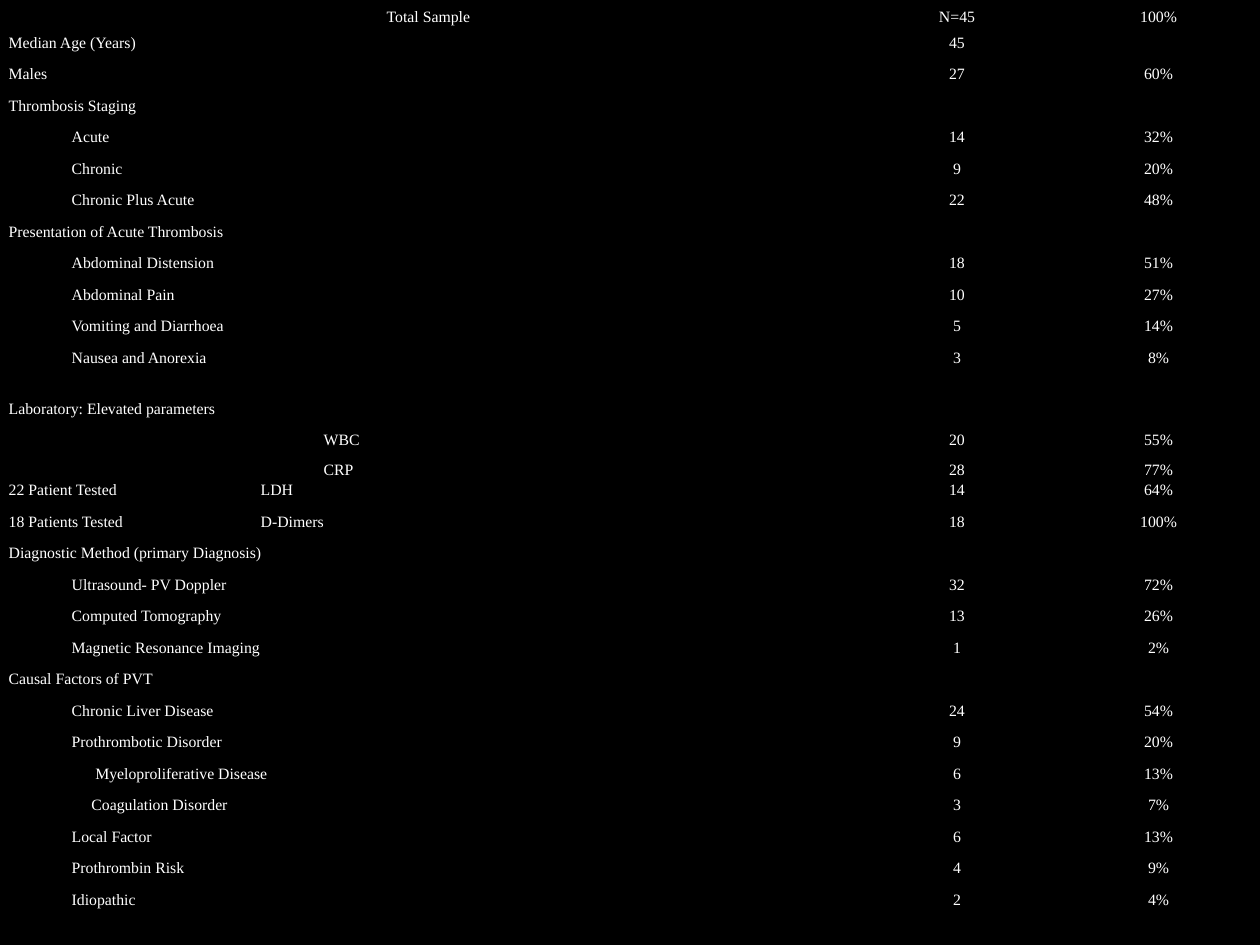
"""Build a one-table slide of patient data on a black ground."""
from typing import NamedTuple

from lxml import etree
from pptx import Presentation
from pptx import util as u
from pptx.dml.color import RGBColor
from pptx.enum import text
from pptx.oxml import ns

FONT, SIZE = "Times New Roman", 9
INK, GROUND = "FFFFFF", "000000"
WIDTHS = (489.6, 114.5, 115.9)
STEP, SUB, DEEP, TAB = 18, 36, 180, 144
ALIGN = text.PP_ALIGN
ANCHOR = text.MSO_ANCHOR


class Line(NamedTuple):
    label: str
    count: str = ""
    share: str = ""
    indent: float = 0


class Row(NamedTuple):
    lines: tuple[Line, ...]
    height: float = STEP


def one(label: str, count: str = "", share: str = "", indent: float = 0,
        height: float = STEP) -> Row:
    return Row((Line(label, count, share, indent),), height)


ROWS = (
    one("Total Sample", "N=45", "100%"),
    one("Median Age (Years)", "45"),
    one("Males", "27", "60%"),
    one("Thrombosis Staging"),
    one("Acute", "14", "32%", SUB),
    one("Chronic", "9", "20%", SUB),
    one("Chronic Plus Acute", "22", "48%", SUB),
    one("Presentation of Acute Thrombosis"),
    one("Abdominal Distension", "18", "51%", SUB),
    one("Abdominal Pain", "10", "27%", SUB),
    one("Vomiting and Diarrhoea", "5", "14%", SUB),
    one("Nausea and Anorexia", "3", "8%", SUB, 29.5),
    Row((Line("Laboratory: Elevated parameters"),
         Line("WBC", "20", "55%", DEEP),
         Line("CRP", "28", "77%", DEEP)), 36),
    one("22 Patient Tested\tLDH", "14", "64%"),
    one("18 Patients Tested\tD-Dimers", "18", "100%"),
    one("Diagnostic Method (primary Diagnosis)"),
    one("Ultrasound- PV Doppler", "32", "72%", SUB),
    one("Computed Tomography", "13", "26%", SUB),
    one("Magnetic Resonance Imaging", "1", "2%", SUB),
    one("Causal Factors of PVT"),
    one("Chronic Liver Disease", "24", "54%", SUB),
    one("Prothrombotic Disorder", "9", "20%", SUB),
    one("Myeloproliferative Disease", "6", "13%", SUB + 13.5),
    one("Coagulation Disorder", "3", "7%", SUB + 11.25),
    one("Local Factor", "6", "13%", SUB),
    one("Prothrombin Risk", "4", "9%", SUB),
    one("Idiopathic", "2", "4%", SUB),
)


def paint(fill, color: str) -> None:
    fill.solid()
    fill.fore_color.rgb = RGBColor.from_string(color)


def add(parent, tag: str, **attrs):
    return etree.SubElement(parent, ns.qn(tag), {k: str(v) for k, v in attrs.items()})


def frame(cell) -> None:
    props = cell._tc.get_or_add_tcPr()
    for side in "LRTB":
        edge = add(props, f"a:ln{side}", w=u.Pt(1))
        add(add(edge, "a:solidFill"), "a:srgbClr", val=GROUND)
    cell.fill.background()
    cell.margin_left = cell.margin_right = u.Pt(5)
    cell.margin_top = cell.margin_bottom = 0


def style(para, align, indent: float) -> None:
    para.alignment = align
    para.line_spacing = 1.15
    para.space_before = u.Pt(6)
    props = para._p.get_or_add_pPr()
    if indent:
        props.set("marL", str(u.Pt(indent)))
    if "\t" in para.text:
        add(add(props, "a:tabLst"), "a:tab", pos=u.Pt(TAB), algn="l")
    for run in para.runs:
        run.font.name, run.font.size = FONT, u.Pt(SIZE)
        paint(run.font.fill, INK)
    if not para.runs:
        add(para._p, "a:endParaRPr", sz=SIZE * 100)


def write(cell, words: list[str], align, indents: list[float], anchor) -> None:
    frame(cell)
    cell.vertical_anchor = anchor
    cell.text_frame.text = "\n".join(words)
    for para, indent in zip(cell.text_frame.paragraphs, indents):
        style(para, align, indent)


def draw(table, num: int, row: Row) -> None:
    table.rows[num].height = u.Pt(row.height)
    head = num == 0
    anchor = ANCHOR.MIDDLE if head else ANCHOR.TOP
    write(table.cell(num, 0), [line.label for line in row.lines],
          ALIGN.CENTER if head else ALIGN.JUSTIFY,
          [line.indent for line in row.lines], anchor)
    if len(row.lines) > 1:
        anchor = ANCHOR.BOTTOM
    for col, key in enumerate(("count", "share"), 1):
        words = [getattr(line, key) for line in row.lines if getattr(line, key)]
        write(table.cell(num, col), words, ALIGN.CENTER, [0] * max(1, len(words)), anchor)


def main() -> None:
    deck = Presentation()
    deck.slide_width, deck.slide_height = u.Pt(720), u.Pt(540)
    slide = deck.slides.add_slide(deck.slide_layouts[6])
    paint(slide.background.fill, GROUND)
    high = sum(row.height for row in ROWS)
    table = slide.shapes.add_table(len(ROWS), len(WIDTHS), 0, 0, u.Pt(720), u.Pt(high)).table
    table.first_row = table.horz_banding = False
    for col, width in zip(table.columns, WIDTHS):
        col.width = u.Pt(width)
    for num, row in enumerate(ROWS):
        draw(table, num, row)
    deck.save("out.pptx")


if __name__ == "__main__":
    main()
